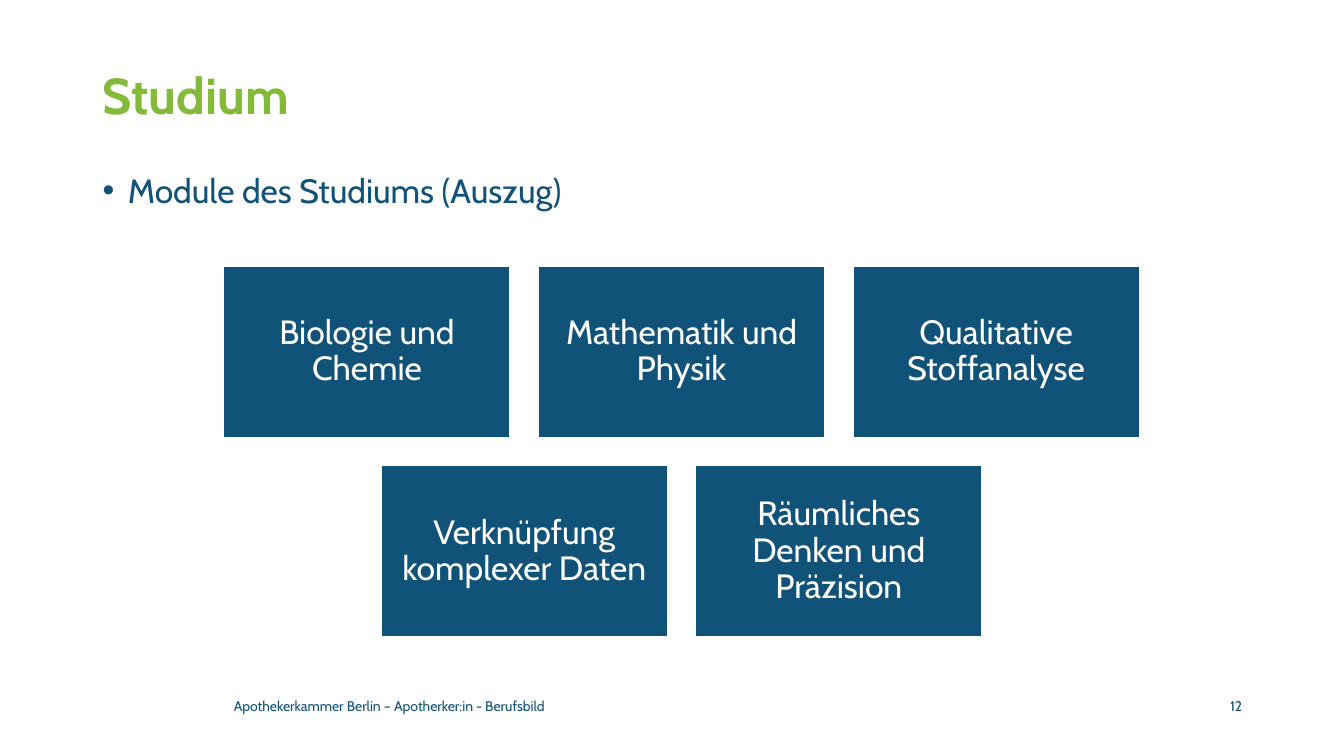
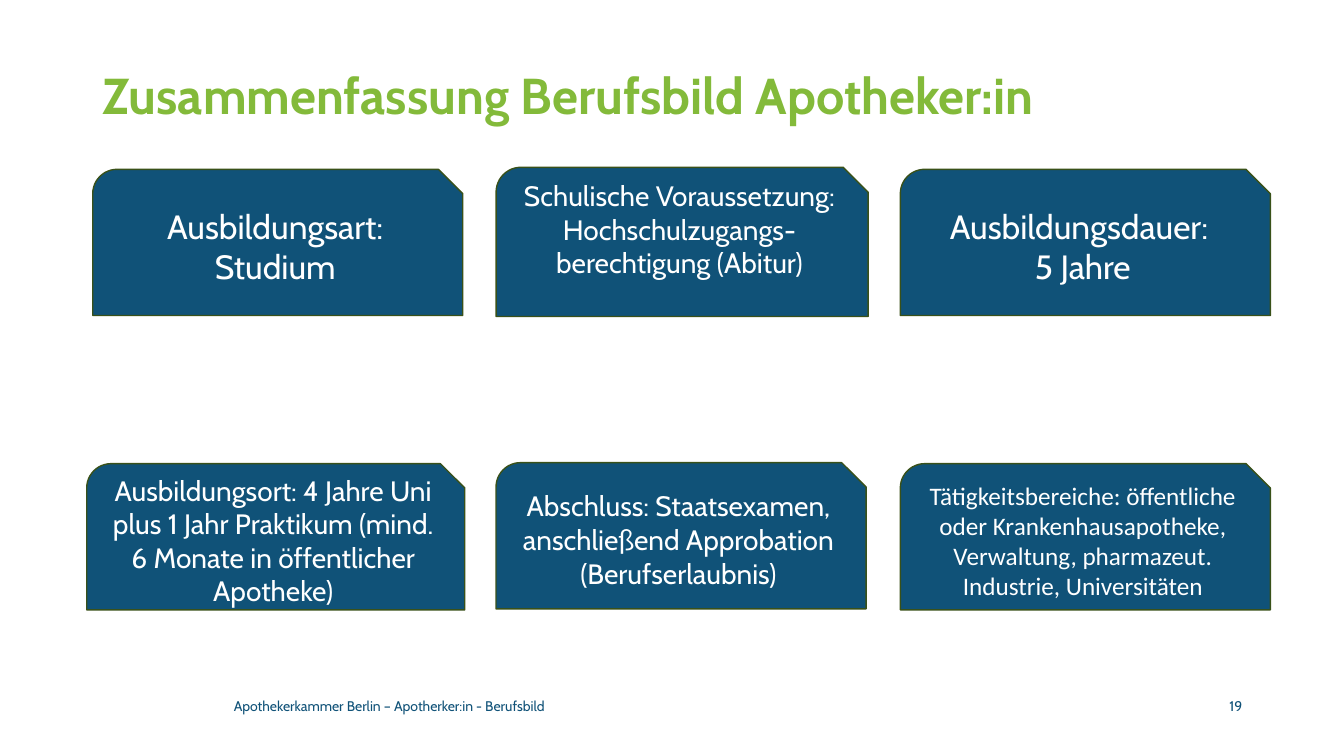
import pptx
import pptx.util
import pptx.dml.color
import pptx.enum.shapes
import pptx.enum.text
import lxml.etree

SHAPE = pptx.enum.shapes.MSO_SHAPE
ALIGN = pptx.enum.text.PP_ALIGN
ANCHOR = pptx.enum.text.MSO_ANCHOR
BLUE, GREEN, OLIVE, WHITE = "105278", "83BA3A", "395119", "FFFFFF"
FONT = "Cabin"
FOOTER = "Apothekerkammer Berlin – Apotherker:in - Berufsbild"

TOPIC = "Module des Studiums (Auszug)"
ROWS = [
    ["Biologie und Chemie", "Mathematik und Physik", "Qualitative Stoffanalyse"],
    ["Verknüpfung komplexer Daten", "Räumliches Denken und Präzision"],
]
CARDS = [
    ("Ausbildungsart: Studium", (92, 168, 367, 145), 24, FONT, 5),
    ("Schulische Voraussetzung: Hochschulzugangs-berechtigung (Abitur)",
     (492, 166, 369, 148), 20, FONT, 38),
    ("Ausbildungsdauer: \v5 Jahre", (893, 168, 367, 145), 24, FONT, 5),
    ("Ausbildungsort: 4 Jahre Uni plus 1 Jahr Praktikum "
     "(mind. 6 Monate in öffentlicher Apotheke)", (86, 460, 375, 145), 20, FONT, 5),
    ("Abschluss: Staatsexamen, anschließend Approbation (Berufserlaubnis)",
     (492, 459, 367, 145), 20, FONT, 5),
    ("Tätigkeitsbereiche: öffentliche oder Krankenhausapotheke, Verwaltung, "
     "pharmazeut. Industrie, Universitäten", (893, 460, 367, 145), 18, "Calibri", 5),
]


def px(n):
    return pptx.util.Emu(n * 9144)


def color(code):
    return pptx.dml.color.RGBColor.from_string(code)


def write(shape, text, size, tint, align=ALIGN.LEFT, anchor=ANCHOR.MIDDLE,
          pads=(10, 5, 10, 5), face=FONT, bold=False, lead=1.0):
    frame = shape.text_frame
    frame.text = text
    frame.word_wrap = True
    frame.vertical_anchor = anchor
    (frame.margin_left, frame.margin_top,
     frame.margin_right, frame.margin_bottom) = map(px, pads)
    para = frame.paragraphs[0]
    para.alignment = align
    para.line_spacing = lead
    for run in para.runs:
        font = run.font
        font.name, font.size, font.bold = face, pptx.util.Pt(size), bold
        font.color.rgb = color(tint)
    return para


def label(slide, box, *args, **style):
    return write(slide.shapes.add_textbox(*map(px, box)), *args, **style)


def panel(slide, kind, box, edge, text, size, **style):
    shape = slide.shapes.add_shape(kind, *map(px, box))
    shape.shadow.inherit = False
    shape.fill.solid()
    shape.fill.fore_color.rgb = color(BLUE)
    shape.line.color.rgb = color(edge)
    shape.line.width = pptx.util.Pt(1)
    write(shape, text, size, WHITE, align=ALIGN.CENTER, **style)


def bullet(para):
    props = para._p.get_or_add_pPr()
    props.set("marL", str(px(25)))
    props.set("indent", str(px(-25)))
    space = "{http://schemas.openxmlformats.org/drawingml/2006/main}"
    lxml.etree.SubElement(props, space + "buFont").set("typeface", "Arial")
    lxml.etree.SubElement(props, space + "buChar").set("char", "•")


def page(deck, title, number):
    slide = deck.slides.add_slide(deck.slide_layouts[6])
    label(slide, (92, 40, 1150, 114), title, 36, GREEN, bold=True, lead=0.9)
    label(slide, (222, 680, 871, 40), FOOTER, 10, BLUE)
    label(slide, (1098, 680, 144, 40), str(number), 10, BLUE, align=ALIGN.RIGHT)
    return slide


def study(deck):
    slide = page(deck, "Studium", 12)
    bullet(label(slide, (92, 168, 1150, 60), TOPIC, 24, BLUE,
                 anchor=ANCHOR.TOP, lead=0.9))
    wide, high, gap, mid, top = 284, 170, 28, 676, 264
    for row, names in enumerate(ROWS):
        left = mid - (len(names) * (wide + gap) - gap) // 2
        for col, name in enumerate(names):
            box = (left + col * (wide + gap), top + row * (high + gap), wide, high)
            panel(slide, SHAPE.RECTANGLE, box, WHITE, name, 24,
                  pads=(10, 10, 10, 10), lead=0.9)


def recap(deck):
    slide = page(deck, "Zusammenfassung Berufsbild Apotheker:in", 19)
    for text, box, size, face, foot in CARDS:
        panel(slide, SHAPE.SNIP_ROUND_RECTANGLE, box, OLIVE, text, size,
              face=face, pads=(10, 5, 10, foot))


def main():
    deck = pptx.Presentation()
    deck.slide_width, deck.slide_height = px(1333), px(750)
    study(deck)
    recap(deck)
    deck.save("out.pptx")


if __name__ == "__main__":
    main()
